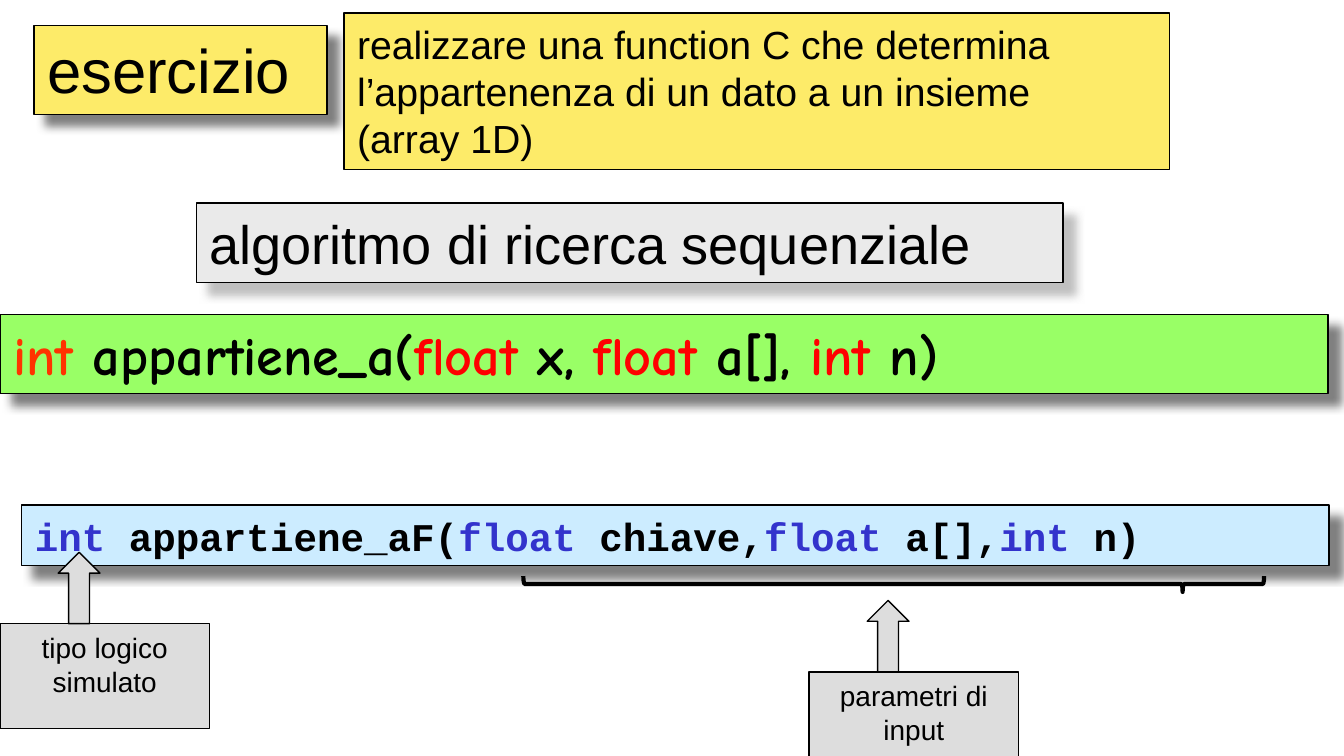
from lxml import etree
from pptx import Presentation
from pptx.dml.color import RGBColor
from pptx.enum.shapes import MSO_SHAPE
from pptx.enum.text import MSO_ANCHOR, MSO_AUTO_SIZE, PP_ALIGN
from pptx.oxml.ns import qn
from pptx.util import Cm, Pt

RECT, ARROW, BRACE = MSO_SHAPE.RECTANGLE, MSO_SHAPE.UP_ARROW, MSO_SHAPE.RIGHT_BRACE
TOP, FIXED = MSO_ANCHOR.TOP, MSO_AUTO_SIZE.NONE
LEFT, CENTER = PP_ALIGN.LEFT, PP_ALIGN.CENTER

BLACK = RGBColor(0x00, 0x00, 0x00)
YELLOW = RGBColor(0xFD, 0xEB, 0x69)
GREEN = RGBColor(0x99, 0xFF, 0x66)
SKY = RGBColor(0xCC, 0xEC, 0xFF)
SILVER = RGBColor(0xEA, 0xEA, 0xEA)
GRAY = RGBColor(0xDD, 0xDD, 0xDD)
ORANGE = RGBColor(0xFF, 0x33, 0x00)
RED = RGBColor(0xFF, 0x00, 0x00)
BLUE = RGBColor(0x33, 0x33, 0xCC)


class Page:
    font = "Arial"
    shade = "808080"

    def __init__(self, deck):
        self.slide = deck.slides.add_slide(deck.slide_layouts[5])

    def paint(self, shape, fill, width=0.75):
        shape.line.color.rgb = BLACK
        shape.line.width = Pt(width)
        if fill is None:
            shape.fill.background()
        else:
            shape.fill.solid()
            shape.fill.fore_color.rgb = fill

    def form(self, kind, at, fill, width=0.75):
        shape = self.slide.shapes.add_shape(kind, *map(Cm, at))
        shape.shadow.inherit = False
        self.paint(shape, fill, width)
        return shape

    def shadow(self, shape, alpha=100):
        shape.shadow.inherit = False
        effects = shape._element.spPr.find(qn("a:effectLst"))
        outer = etree.SubElement(effects, qn("a:outerShdw"), blurRad=str(Pt(5)),
                                 dist=str(Pt(8.5)), dir="2700000", algn="tl",
                                 rotWithShape="0")
        color = etree.SubElement(outer, qn("a:srgbClr"), val=self.shade)
        etree.SubElement(color, qn("a:alpha"), val=str(alpha * 1000))

    def style(self, frame, size, align=LEFT):
        frame.word_wrap = True
        frame.auto_size = FIXED
        frame.vertical_anchor = TOP
        frame.margin_left = frame.margin_right = Cm(0.25)
        frame.margin_top = frame.margin_bottom = Cm(0.13)
        for par in frame.paragraphs:
            par.alignment = align
            for run in par.runs:
                run.font.size = Pt(size)
                run.font.name = self.font
                run.font.color.rgb = BLACK

    def title(self, text, at, fill, size):
        shape = self.slide.shapes.title
        shape.left, shape.top, shape.width, shape.height = map(Cm, at)
        shape.text_frame.text = text
        self.style(shape.text_frame, size)
        self.paint(shape, fill)
        self.shadow(shape)

    def box(self, text, at, fill, size, align=LEFT):
        shape = self.form(RECT, at, fill)
        shape.text_frame.text = text
        self.style(shape.text_frame, size, align)
        return shape

    def code(self, parts, at, fill, size, font):
        """Draw a bar holding one line of code, given as (text, color) parts."""
        shape = self.form(RECT, at, fill)
        for text, _ in parts:
            shape.text_frame.paragraphs[0].add_run().text = text
        self.style(shape.text_frame, size)
        for run, (_, color) in zip(shape.text_frame.paragraphs[0].runs, parts):
            run.font.name = font
            run.font.bold = True
            run.font.color.rgb = color
        self.shadow(shape)

    def note(self, text, left, top):
        """Draw a caption with an arrow rising from its top edge."""
        self.box(text, (left, top, 3.96, 1.98), GRAY, 15, CENTER)
        self.form(ARROW, (left + 1.1, top - 1.35, 0.79, 1.35), GRAY)

    def brace(self, at):
        shape = self.form(BRACE, at, None, 2.25)
        shape.rotation = 90
        shape.adjustments[0] = 0.083
        shape.adjustments[1] = 0.11


def main():
    deck = Presentation()
    deck.slide_width, deck.slide_height = Cm(25.4), Cm(14.29)
    page = Page(deck)

    page.title("esercizio", (0.64, 0.48, 5.54, 1.68), YELLOW, 33)
    page.box("realizzare una function C che determina l’appartenenza "
             "di un dato a un insieme\n(array 1D)",
             (6.5, 0.25, 15.6, 2.95), YELLOW, 21)
    method = page.box("algoritmo di ricerca sequenziale",
                      (3.71, 3.84, 16.38, 1.5), SILVER, 29)
    page.shadow(method, 50)

    page.code([("int ", ORANGE), ("appartiene_a(", BLACK), ("float", RED),
               (" x,", BLACK), (" float ", RED), ("a[], ", BLACK),
               ("int ", RED), ("n)", BLACK)],
              (0, 5.94, 25.1, 1.5), GREEN, 29, "Comic Neue")
    page.code([("int", BLUE), (" appartiene_aF(", BLACK), ("float", BLUE),
               (" chiave,", BLACK), ("float", BLUE), (" a[],", BLACK),
               ("int ", BLUE), ("n)", BLACK)],
              (0.41, 9.55, 24.71, 1.14), SKY, 21, "Courier New")

    page.note("tipo logico simulato", 0, 11.79)
    page.note("parametri di input", 15.29, 12.7)
    page.brace((16.74, 4.04, 0.3, 14))

    deck.save("out.pptx")


if __name__ == "__main__":
    main()
